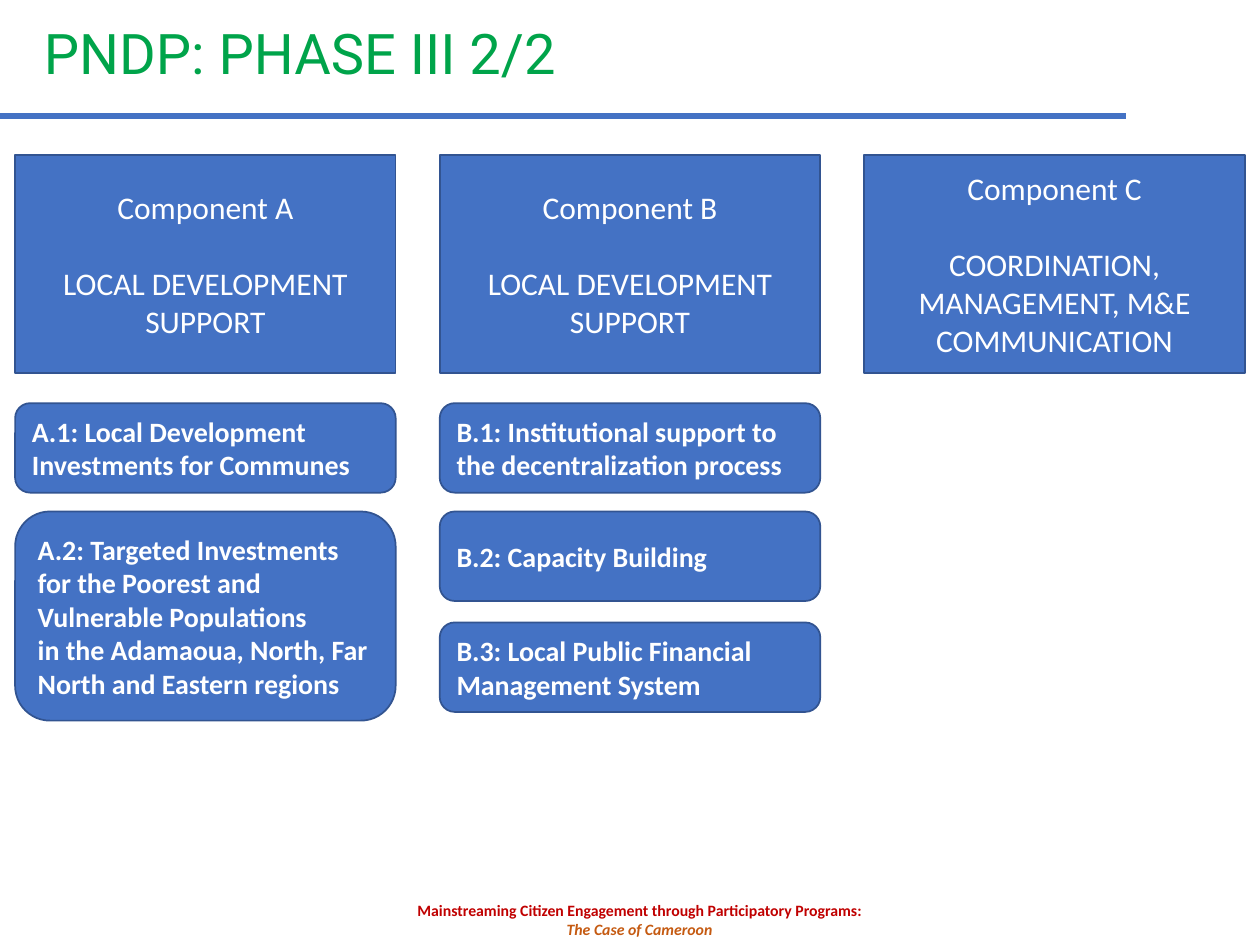
from dataclasses import dataclass

from lxml.etree import SubElement
from pptx import Presentation
from pptx.dml.color import RGBColor
from pptx.enum.shapes import MSO_CONNECTOR, MSO_SHAPE
from pptx.enum.text import MSO_ANCHOR, PP_ALIGN
from pptx.oxml.ns import qn
from pptx.util import Inches, Pt


@dataclass(frozen=True)
class Theme:
    blue: str = "4472C4"
    outline: str = "325491"
    white: str = "FFFFFF"
    green: str = "00A44A"
    red: str = "C00000"
    orange: str = "C55A11"
    heading_font: str = "Roboto"
    body_font: str = "Calibri"
    title_size: int = 32
    component_size: int = 18
    part_size: int = 16
    footer_size: int = 9


THEME = Theme()

COLUMN_LEFT, COLUMN_PITCH, COLUMN_WIDTH = 0.12, 3.37, 3.02
COMPONENT_TOP, COMPONENT_HEIGHT = 1.23, 1.73
PART_HEIGHT = 0.71

# Each component: letter, subject, and its parts as (top, height, paragraphs)
COMPONENTS = [
    ("A", "LOCAL DEVELOPMENT SUPPORT", [
        (3.2, PART_HEIGHT, ["A.1: Local Development Investments for Communes"]),
        (4.06, 1.66, [
            "A.2: Targeted Investments for the Poorest and Vulnerable Populations",
            "in the Adamaoua, North, Far North and Eastern regions"]),
    ]),
    ("B", "LOCAL DEVELOPMENT SUPPORT", [
        (3.2, PART_HEIGHT, ["B.1: Institutional support to the decentralization process"]),
        (4.06, PART_HEIGHT, ["B.2: Capacity Building"]),
        (4.94, PART_HEIGHT, ["B.3: Local Public Financial Management System"]),
    ]),
    ("C", "COORDINATION, MANAGEMENT, M&E COMMUNICATION", []),
]


def style_run(run, size, color, font=THEME.body_font, bold=False, italic=False):
    run.font.name = font
    run.font.size = Pt(size)
    run.font.bold = bold
    run.font.italic = italic
    run.font.color.rgb = RGBColor.from_string(color)


def add_text_area(slide, box):
    frame = slide.shapes.add_textbox(*map(Inches, box)).text_frame
    frame.word_wrap = True
    frame.vertical_anchor = MSO_ANCHOR.MIDDLE
    return frame


def add_block(slide, box, outline_shape, lines, size, align, bold=False):
    block = slide.shapes.add_shape(outline_shape, *map(Inches, box))
    block.shadow.inherit = False
    block.fill.solid()
    block.fill.fore_color.rgb = RGBColor.from_string(THEME.blue)
    block.line.color.rgb = RGBColor.from_string(THEME.outline)
    block.line.width = Pt(1)
    frame = block.text_frame
    frame.word_wrap = True
    frame.vertical_anchor = MSO_ANCHOR.MIDDLE
    frame.text = "\n".join(lines)
    for paragraph in frame.paragraphs:
        paragraph.alignment = align
        style_run(paragraph.runs[0], size, THEME.white, bold=bold)
    return frame


def add_title(slide, box):
    frame = add_text_area(slide, box)
    frame.text = "PNDP: PHASE III 2/2"
    frame.paragraphs[0].line_spacing = 0.9
    style_run(frame.paragraphs[0].runs[0], THEME.title_size, THEME.green,
              THEME.heading_font)


def add_title_rule(slide, top, length):
    rule = slide.shapes.add_connector(
        MSO_CONNECTOR.STRAIGHT, 0, Inches(top), Inches(length), Inches(top))
    rule.line.color.rgb = RGBColor.from_string(THEME.blue)
    rule.line.width = Pt(3)
    SubElement(rule._element.spPr, qn("a:effectLst"))


def add_component(slide, box, letter, subject, parts):
    """Place a component heading in its box and its parts below it."""
    left, _, width, _ = box
    heading = add_block(slide, box, MSO_SHAPE.RECTANGLE,
                        [f"Component {letter}", subject],
                        THEME.component_size, PP_ALIGN.CENTER)
    heading.paragraphs[1].space_before = Pt(22)
    for top, height, lines in parts:
        add_block(slide, (left, top, width, height), MSO_SHAPE.ROUNDED_RECTANGLE,
                  lines, THEME.part_size, PP_ALIGN.LEFT, bold=True)


def add_footer(slide, box):
    paragraph = add_text_area(slide, box).paragraphs[0]
    paragraph.text = ("Mainstreaming Citizen Engagement through Participatory Programs:"
                      "\vThe Case of Cameroon")
    paragraph.alignment = PP_ALIGN.CENTER
    programme, case = paragraph.runs
    style_run(programme, THEME.footer_size, THEME.red, bold=True)
    style_run(case, THEME.footer_size, THEME.orange, bold=True, italic=True)
    # The line break takes the footer size too
    line_break = paragraph._p.find(qn("a:br"))
    SubElement(line_break, qn("a:rPr"), sz=str(THEME.footer_size * 100))


def main():
    deck = Presentation()
    deck.slide_width, deck.slide_height = Inches(10), Inches(7.5)
    slide = deck.slides.add_slide(deck.slide_layouts[6])

    # Heading
    add_title(slide, (0.25, 0.21, 5.06, 0.47))
    add_title_rule(slide, 0.92, 8.94)

    # Component columns
    for column, (letter, subject, parts) in enumerate(COMPONENTS):
        left = COLUMN_LEFT + column * COLUMN_PITCH
        add_component(slide, (left, COMPONENT_TOP, COLUMN_WIDTH, COMPONENT_HEIGHT),
                      letter, subject, parts)

    # Footer
    add_footer(slide, (3.13, 7.1, 3.89, 0.4))
    deck.save("out.pptx")


if __name__ == "__main__":
    main()
